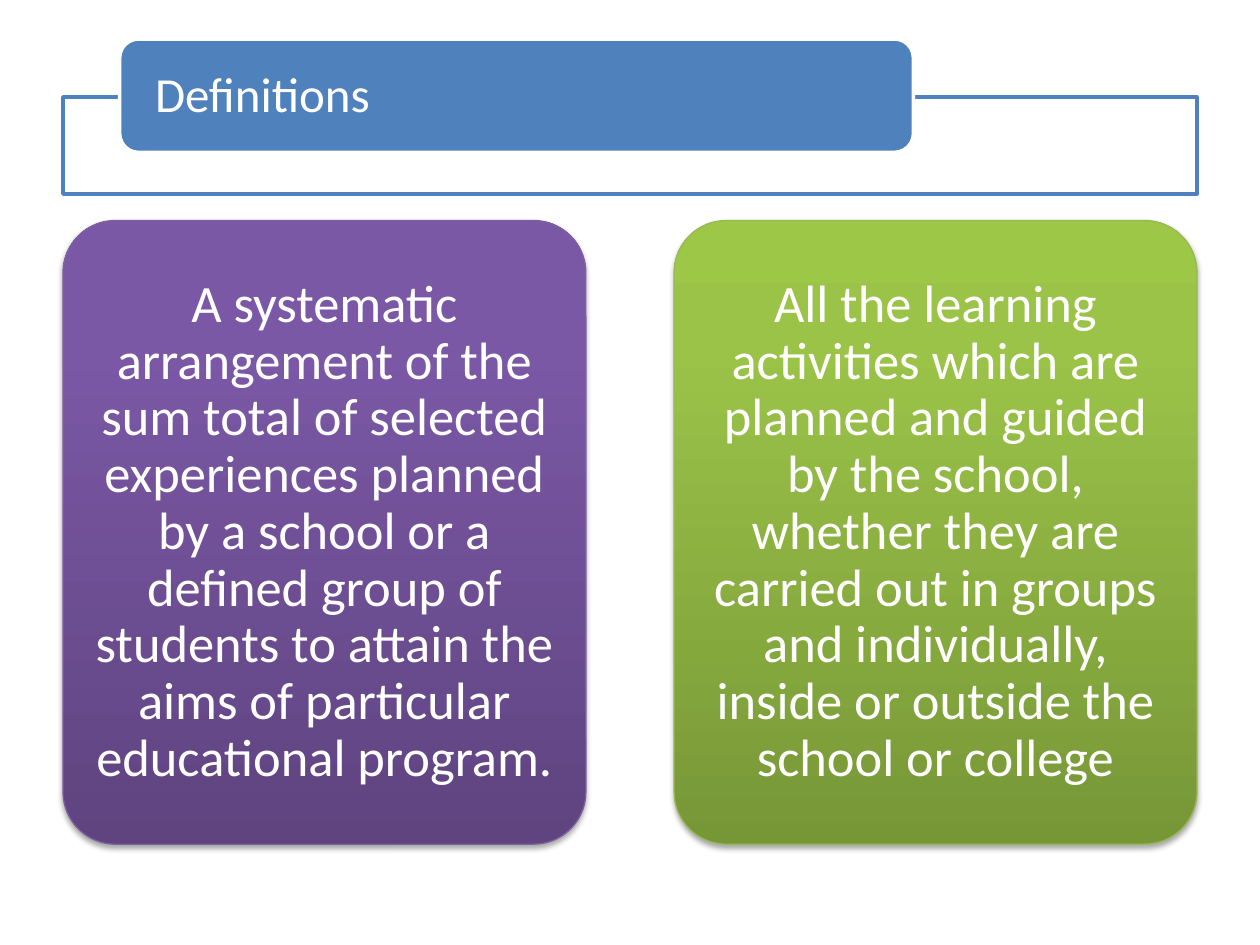
"""Build a slide with a tabbed heading and two definition cards."""
from dataclasses import dataclass

from pptx import Presentation
from pptx.dml.color import RGBColor
from pptx.enum.shapes import MSO_SHAPE
from pptx.enum.text import MSO_ANCHOR, MSO_AUTO_SIZE, PP_ALIGN
from pptx.oxml import parse_xml
from pptx.oxml.ns import nsdecls, qn
from pptx.util import Inches, Pt

DEFINITIONS = [
    "A systematic arrangement of the sum total of selected experiences planned by "
    "a school or a defined group of students to attain the aims of particular "
    "educational program.",
    "All the learning activities which are planned and guided by the school, whether "
    "they are carried out in groups and individually, inside or outside the school "
    "or college",
]


@dataclass(frozen=True)
class Theme:
    font: str = "Calibri"
    title_size: int = 28
    body_size: int = 30
    white: str = "FFFFFF"
    blue: str = "4F81BD"
    shadow: str = "000000"
    card_lines: tuple = ("7D60A0", "98B955")
    card_gradients: tuple = (
        ((0, "5F4480"), (80, "7B58A6"), (100, "7C57A8")),
        ((0, "779737"), (80, "9BC348"), (100, "9DC746")),
    )


class SlideBuilder:
    columns, rows = 20, 15

    def __init__(self, deck, theme):
        self.theme = theme
        self.slide = deck.slides.add_slide(deck.slide_layouts[5])
        self.column = deck.slide_width / self.columns
        self.row = deck.slide_height / self.rows

    def area(self, left, top, width, height):
        return (round(left * self.column), round(top * self.row),
                round(width * self.column), round(height * self.row))

    def box(self, kind, area, fill, line, line_width=2):
        box = self.slide.shapes.add_shape(kind, *self.area(*area))
        box.shadow.inherit = False
        box.fill.solid()
        box.fill.fore_color.rgb = RGBColor.from_string(fill)
        box.line.color.rgb = RGBColor.from_string(line)
        box.line.width = Pt(line_width)
        return box

    def frame(self, area):
        box = self.box(MSO_SHAPE.RECTANGLE, area, self.theme.white, self.theme.blue)
        color = box.element.spPr.find(qn("a:solidFill"))[0]
        color.append(parse_xml(f'<a:alpha {nsdecls("a")} val="90000"/>'))

    def tab(self, area):
        self.box(MSO_SHAPE.ROUNDED_RECTANGLE, area, self.theme.blue, self.theme.white)

    def set_text(self, shape, text, size, align, side, edge):
        text_frame = shape.text_frame
        text_frame.text = text
        text_frame.word_wrap = True
        text_frame.auto_size = MSO_AUTO_SIZE.NONE
        text_frame.vertical_anchor = MSO_ANCHOR.MIDDLE
        text_frame.margin_left = text_frame.margin_right = Inches(side)
        text_frame.margin_top = text_frame.margin_bottom = Inches(edge)
        para = text_frame.paragraphs[0]
        para.alignment = align
        para.line_spacing = 0.9
        para.space_after = Pt(0)
        spacing = next(shape.element.iter(qn("a:spcAft")))
        spacing.replace(spacing[0], parse_xml(f'<a:spcPct {nsdecls("a")} val="35000"/>'))
        for span in para.runs:
            span.font.name = self.theme.font
            span.font.size = Pt(size)
            span.font.color.rgb = RGBColor.from_string(self.theme.white)

    def title(self, area, text):
        title = self.slide.shapes.title
        title.left, title.top, title.width, title.height = self.area(*area)
        self.set_text(title, text, self.theme.title_size, PP_ALIGN.LEFT, 0.24, 0)
        title.element.getparent().append(title.element)

    def card(self, area, text, gradient, line):
        box = self.box(MSO_SHAPE.ROUNDED_RECTANGLE, area, gradient[0][1], line, 0.75)
        box.adjustments[0] = 0.1
        properties = box.element.spPr
        stops = "".join(
            f'<a:gs pos="{share * 1000}"><a:srgbClr val="{color}"/></a:gs>'
            for share, color in gradient)
        properties.replace(properties.find(qn("a:solidFill")), parse_xml(
            f'<a:gradFill {nsdecls("a")} rotWithShape="1"><a:gsLst>{stops}</a:gsLst>'
            '<a:lin ang="16200000" scaled="0"/></a:gradFill>'))
        properties.find(qn("a:effectLst")).append(parse_xml(
            f'<a:outerShdw {nsdecls("a")} blurRad="{Pt(3.1)}" dist="{Pt(1.8)}" '
            f'dir="5400000" rotWithShape="0"><a:srgbClr val="{self.theme.shadow}">'
            '<a:alpha val="35000"/></a:srgbClr></a:outerShdw>'))
        self.set_text(box, text, self.theme.body_size, PP_ALIGN.CENTER, 0.12, 0.12)


def main():
    deck = Presentation()
    deck.slide_width, deck.slide_height = Inches(10), Inches(7.5)
    theme = Theme()
    builder = SlideBuilder(deck, theme)
    builder.frame((1, 1.54, 18, 1.54))
    builder.tab((1.9, 0.62, 12.6, 1.8))
    builder.title((1.98, 0.72, 12.42, 1.64), "Definitions")
    cards = zip(DEFINITIONS, theme.card_gradients, theme.card_lines)
    for index, (text, gradient, line) in enumerate(cards):
        builder.card((1 + index * 9.7, 3.5, 8.3, 9.9), text, gradient, line)
    deck.save("out.pptx")


if __name__ == "__main__":
    main()
